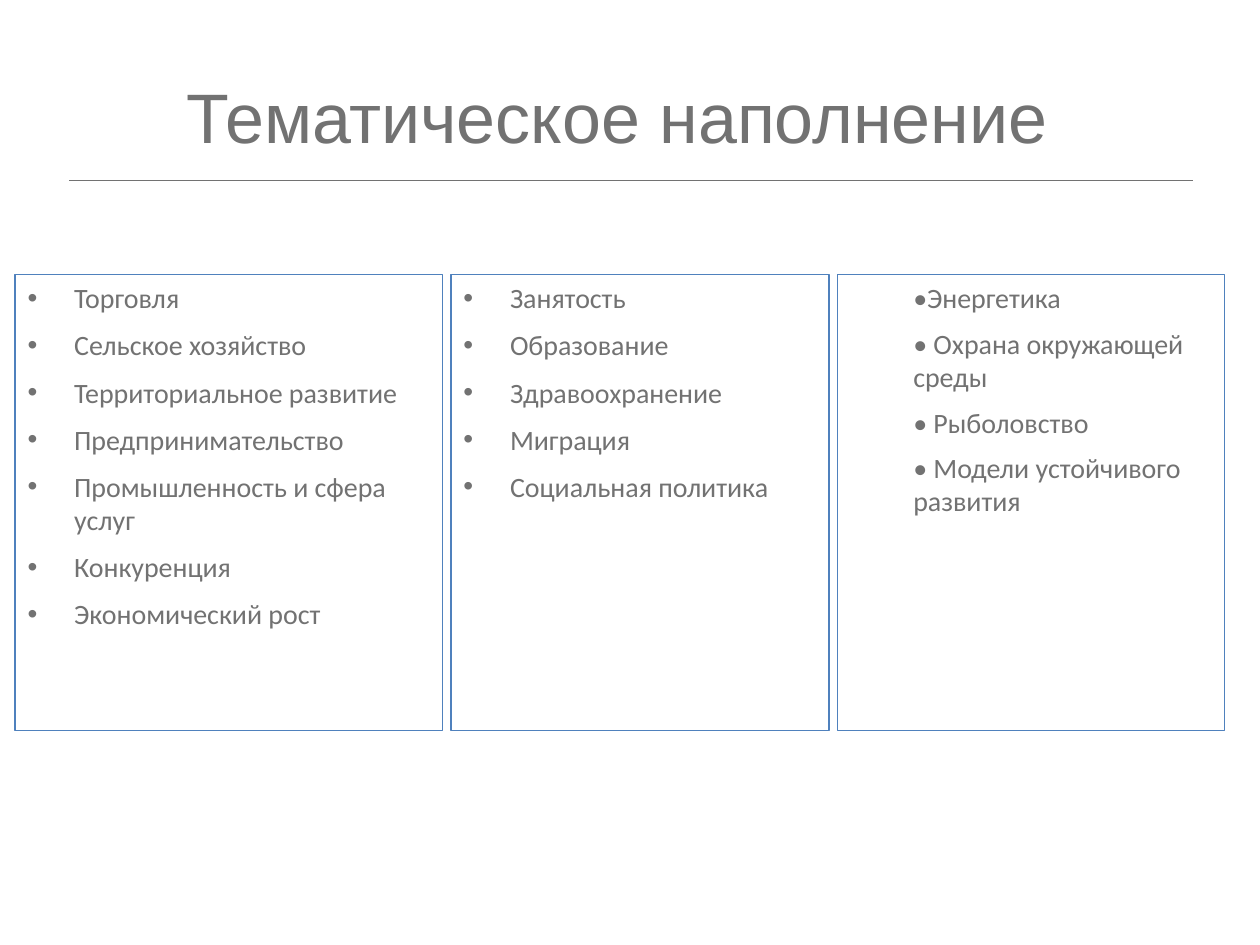
from lxml.etree import SubElement
from pptx import Presentation
from pptx.dml.color import RGBColor
from pptx.enum.shapes import MSO_CONNECTOR, MSO_SHAPE
from pptx.enum.text import MSO_ANCHOR, PP_ALIGN
from pptx.oxml.ns import qn
from pptx.util import Inches, Pt

GREY = "727272"
BLUE = "4F81BD"
TITLE = "Тематическое наполнение"
HANGING = {"margin": 0.37, "indent": -0.37, "level": 0, "space": 7.7, "bullet": "•"}
INLINE = {"margin": 0.5, "indent": 0, "level": 1, "space": 6.7, "bullet": None}
COLUMNS = [
    (3.39, HANGING, [
        "Торговля", "Сельское хозяйство", "Территориальное развитие",
        "Предпринимательство", "Промышленность и сфера услуг",
        "Конкуренция", "Экономический рост",
    ]),
    (3, HANGING, [
        "Занятость", "Образование", "Здравоохранение", "Миграция",
        "Социальная политика",
    ]),
    (3.07, INLINE, [
        "•Энергетика", "• Охрана окружающей среды", "• Рыболовство",
        "• Модели устойчивого развития",
    ]),
]
LEFT, TOP, HEIGHT, GAP = 0.12, 2.18, 3.62, 0.07


def color(value):
    return RGBColor.from_string(value)


def format_font(paragraph, name, size):
    values = {"name": name, "size": Pt(size), "bold": False}
    for attribute, value in values.items():
        setattr(paragraph.font, attribute, value)
    paragraph.font.color.rgb = color(GREY)


def set_list_style(paragraph, style):
    """Set the level, indents and bullet of one list item."""
    paragraph.level = style["level"]
    properties = paragraph._p.get_or_add_pPr()
    properties.set("marL", str(Inches(style["margin"])))
    properties.set("indent", str(Inches(style["indent"])))
    if style["bullet"]:
        SubElement(properties, qn("a:buFont")).set("typeface", "Arial")
        SubElement(properties, qn("a:buChar")).set("char", style["bullet"])
    else:
        SubElement(properties, qn("a:buNone"))


def add_title(slide):
    title = slide.shapes.title
    title.left, title.top = Inches(1.38), Inches(0.36)
    title.width, title.height = Inches(7.09), Inches(1.11)
    title.text_frame.text = TITLE
    title.text_frame.vertical_anchor = MSO_ANCHOR.MIDDLE
    paragraph = title.text_frame.paragraphs[0]
    paragraph.alignment = PP_ALIGN.LEFT
    format_font(paragraph, "Arial", 40)


def add_title_rule(slide):
    rule = slide.shapes.add_connector(
        MSO_CONNECTOR.STRAIGHT, Inches(0.55), Inches(1.43), Inches(9.47), Inches(1.43))
    rule.line.color.rgb = color(GREY)
    rule.line.width = Pt(0.5)
    SubElement(rule._element.spPr, qn("a:effectLst"))


def add_column(slide, left, width, style, topics):
    box = slide.shapes.add_shape(
        MSO_SHAPE.RECTANGLE, Inches(left), Inches(TOP), Inches(width), Inches(HEIGHT))
    box.shadow.inherit = False
    box.fill.background()
    box.line.color.rgb = color(BLUE)
    box.line.width = Pt(0.75)
    frame = box.text_frame
    frame.word_wrap = True
    frame.vertical_anchor = MSO_ANCHOR.TOP
    for index, topic in enumerate(topics):
        paragraph = frame.add_paragraph() if index else frame.paragraphs[0]
        paragraph.text = topic
        paragraph.alignment = PP_ALIGN.LEFT
        paragraph.space_before = Pt(style["space"] if index else 0)
        set_list_style(paragraph, style)
        format_font(paragraph, "Calibri", 16)


def main():
    presentation = Presentation()
    presentation.slide_width, presentation.slide_height = Inches(10), Inches(7.5)
    slide = presentation.slides.add_slide(presentation.slide_layouts[5])
    add_title_rule(slide)
    add_title(slide)
    left = LEFT
    for width, style, topics in COLUMNS:
        add_column(slide, left, width, style, topics)
        left += width + GAP
    presentation.save("out.pptx")


if __name__ == "__main__":
    main()
